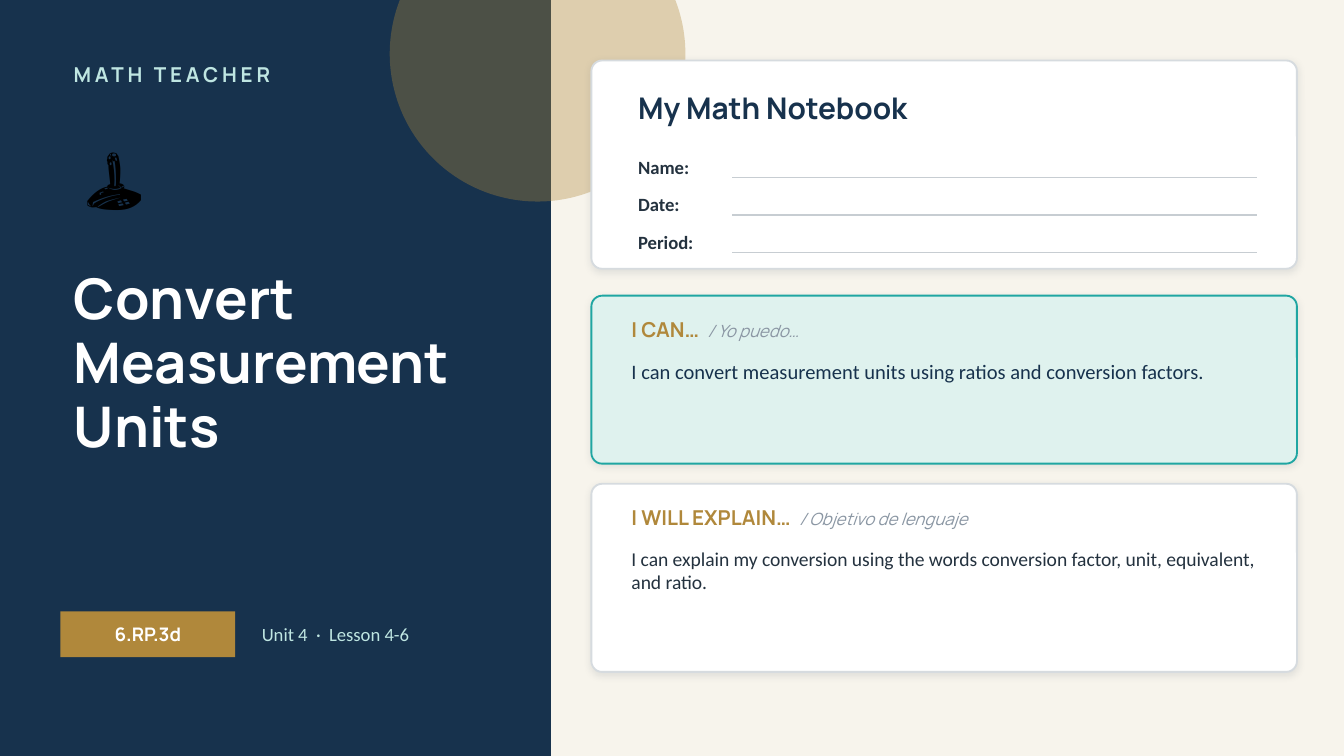
from dataclasses import dataclass

from lxml.etree import SubElement
from pptx import Presentation
from pptx.dml.color import RGBColor
from pptx.enum.shapes import MSO_CONNECTOR, MSO_SHAPE
from pptx.enum.text import MSO_ANCHOR as Anchor, MSO_AUTO_SIZE as AutoSize, PP_ALIGN as Align
from pptx.oxml.ns import qn
from pptx.util import Inches, Pt

COLORS = {
    "paper": "F7F4EC",
    "navy": "17324D",
    "gold": "B0883B",
    "pale_teal": "BFE6E2",
    "mint": "DFF2EE",
    "teal": "1FA6A2",
    "white": "FFFFFF",
    "black": "000000",
    "ink": "24323F",
    "muted": "8A96A3",
    "border": "D6DBDF",
    "rule": "C7CDD2",
    "shadow": "1C2E42",
}
HEADING, BODY = "Manrope", "Calibri"
SLIDE_WIDTH = 10
SLIDE_HEIGHT = SLIDE_WIDTH * 9 / 16
CARD_LEFT, CARD_WIDTH, CARD_RADIUS = 4.4, 5.25, 0.08


@dataclass
class Goal:
    top: float
    height: float
    heading: str
    translation: str
    statement: str
    size: float
    color: str
    fill: str
    border: str


GOALS = [
    Goal(2.2, 1.25, "I CAN…  ", "/ Yo puedo…",
         "I can convert measurement units using ratios and conversion factors.",
         11, "navy", "mint", "teal"),
    Goal(3.6, 1.4, "I WILL EXPLAIN…  ", "/ Objetivo de lenguaje",
         "I can explain my conversion using the words conversion factor, unit, "
         "equivalent, and ratio.",
         10.5, "ink", "white", "border"),
]
FIELDS = ["Name:", "Date:", "Period:"]


def rgb(name: str) -> RGBColor:
    return RGBColor.from_string(COLORS[name])


def place(shape, left: float, top: float, width: float, height: float) -> None:
    shape.left, shape.top = Inches(left), Inches(top)
    shape.width, shape.height = Inches(width), Inches(height)


def write_text(paragraph, text: str, *, size: float, color: str, font: str = BODY,
               bold: bool = False, italic: bool = False, spacing: int = 0) -> None:
    run = paragraph.add_run()
    run.text = text
    run.font.size = Pt(size)
    run.font.name = font
    run.font.bold = bold
    run.font.italic = italic
    run.font.color.rgb = rgb(color)
    if spacing:
        run.font._element.set("spc", str(spacing * 100))


def prepare_frame(shape, anchor=Anchor.MIDDLE, align=Align.LEFT):
    frame = shape.text_frame
    frame.word_wrap = True
    frame.auto_size = AutoSize.NONE
    frame.vertical_anchor = anchor
    paragraph = frame.paragraphs[0]
    paragraph.alignment = align
    return paragraph


def add_text_box(slide, left: float, top: float, width: float, height: float,
                 anchor=Anchor.MIDDLE):
    box = slide.shapes.add_textbox(Inches(left), Inches(top), Inches(width), Inches(height))
    return prepare_frame(box, anchor)


def add_block(slide, kind, left: float, top: float, width: float, height: float, fill: str):
    shape = slide.shapes.add_shape(kind, Inches(left), Inches(top), Inches(width), Inches(height))
    shape.shadow.inherit = False
    shape.fill.solid()
    shape.fill.fore_color.rgb = rgb(fill)
    shape.line.fill.background()
    return shape


def add_card(slide, top: float, height: float, fill: str, border: str) -> None:
    card = add_block(slide, MSO_SHAPE.ROUNDED_RECTANGLE, CARD_LEFT, top, CARD_WIDTH, height, fill)
    card.adjustments[0] = CARD_RADIUS / height
    card.line.color.rgb = rgb(border)
    card.line.width = Pt(1)
    effects = card.element.spPr.find(qn("a:effectLst"))
    shadow = SubElement(effects, qn("a:outerShdw"), blurRad=str(Pt(4)), dist=str(Pt(1)),
                        dir="5400000", algn="bl", rotWithShape="0")
    color = SubElement(shadow, qn("a:srgbClr"), val=COLORS["shadow"])
    SubElement(color, qn("a:alpha"), val="10000")


def add_rule(slide, left: float, right: float, y: float) -> None:
    rule = slide.shapes.add_connector(MSO_CONNECTOR.STRAIGHT, Inches(left), Inches(y),
                                      Inches(right), Inches(y))
    rule.line.color.rgb = rgb("rule")
    rule.line.width = Pt(0.75)
    SubElement(rule.element.spPr, qn("a:effectLst"))


def add_cover(slide) -> None:
    add_block(slide, MSO_SHAPE.RECTANGLE, 0, 0, 4.1, SLIDE_HEIGHT, "navy")
    circle = add_block(slide, MSO_SHAPE.OVAL, 2.9, -0.7, 2.2, 2.2, "gold")
    fill_color = circle.element.spPr.find(qn("a:solidFill")).find(qn("a:srgbClr"))
    SubElement(fill_color, qn("a:alpha"), val="35000")

    write_text(add_text_box(slide, 0.45, 0.4, 3.3, 0.3), "MATH TEACHER",
               size=11, color="pale_teal", font=HEADING, bold=True, spacing=2)
    write_text(add_text_box(slide, 0.45, 0.85, 1.5, 0.9), "🕹️", size=44, color="black")

    title = slide.shapes.title
    place(title, 0.45, 1.95, 3.3, 1.7)
    title.element.getparent().append(title.element)
    paragraph = prepare_frame(title, Anchor.TOP)
    paragraph.line_spacing = 0.95
    write_text(paragraph, "Convert Measurement Units",
               size=30, color="white", font=HEADING, bold=True)

    standard = add_block(slide, MSO_SHAPE.RECTANGLE, 0.45, 4.55, 1.3, 0.34, "gold")
    write_text(prepare_frame(standard, align=Align.CENTER), "6.RP.3d",
               size=10, color="white", font=HEADING, bold=True)
    write_text(add_text_box(slide, 1.85, 4.55, 2.1, 0.34), "Unit 4  ·  Lesson 4-6",
               size=10, color="pale_teal")


def add_notebook_card(slide) -> None:
    add_card(slide, 0.45, 1.55, "white", "border")
    write_text(add_text_box(slide, 4.65, 0.6, 4.8, 0.4), "My Math Notebook",
               size=16, color="navy", font=HEADING, bold=True)
    for index, label in enumerate(FIELDS):
        top = 1.12 + 0.28 * index
        write_text(add_text_box(slide, 4.65, top, 0.8, 0.24), label,
                   size=10, color="ink", bold=True)
        add_rule(slide, 5.45, 9.35, top + 0.2)


def add_goal(slide, goal: Goal) -> None:
    add_card(slide, goal.top, goal.height, goal.fill, goal.border)
    heading = add_text_box(slide, 4.6, goal.top + 0.1, 4.85, 0.3)
    write_text(heading, goal.heading, size=11, color="gold", font=HEADING, bold=True)
    write_text(heading, goal.translation, size=9, color="muted", font=HEADING, italic=True)
    statement = add_text_box(slide, 4.6, goal.top + 0.42, 4.85, goal.height - 0.48, Anchor.TOP)
    write_text(statement, goal.statement, size=goal.size, color=goal.color)


def main() -> None:
    presentation = Presentation()
    presentation.slide_width = Inches(SLIDE_WIDTH)
    presentation.slide_height = Inches(SLIDE_HEIGHT)
    slide = presentation.slides.add_slide(presentation.slide_layouts.get_by_name("Title Only"))
    slide.background.fill.solid()
    slide.background.fill.fore_color.rgb = rgb("paper")
    add_cover(slide)
    add_notebook_card(slide)
    for goal in GOALS:
        add_goal(slide, goal)
    presentation.save("out.pptx")


if __name__ == "__main__":
    main()
